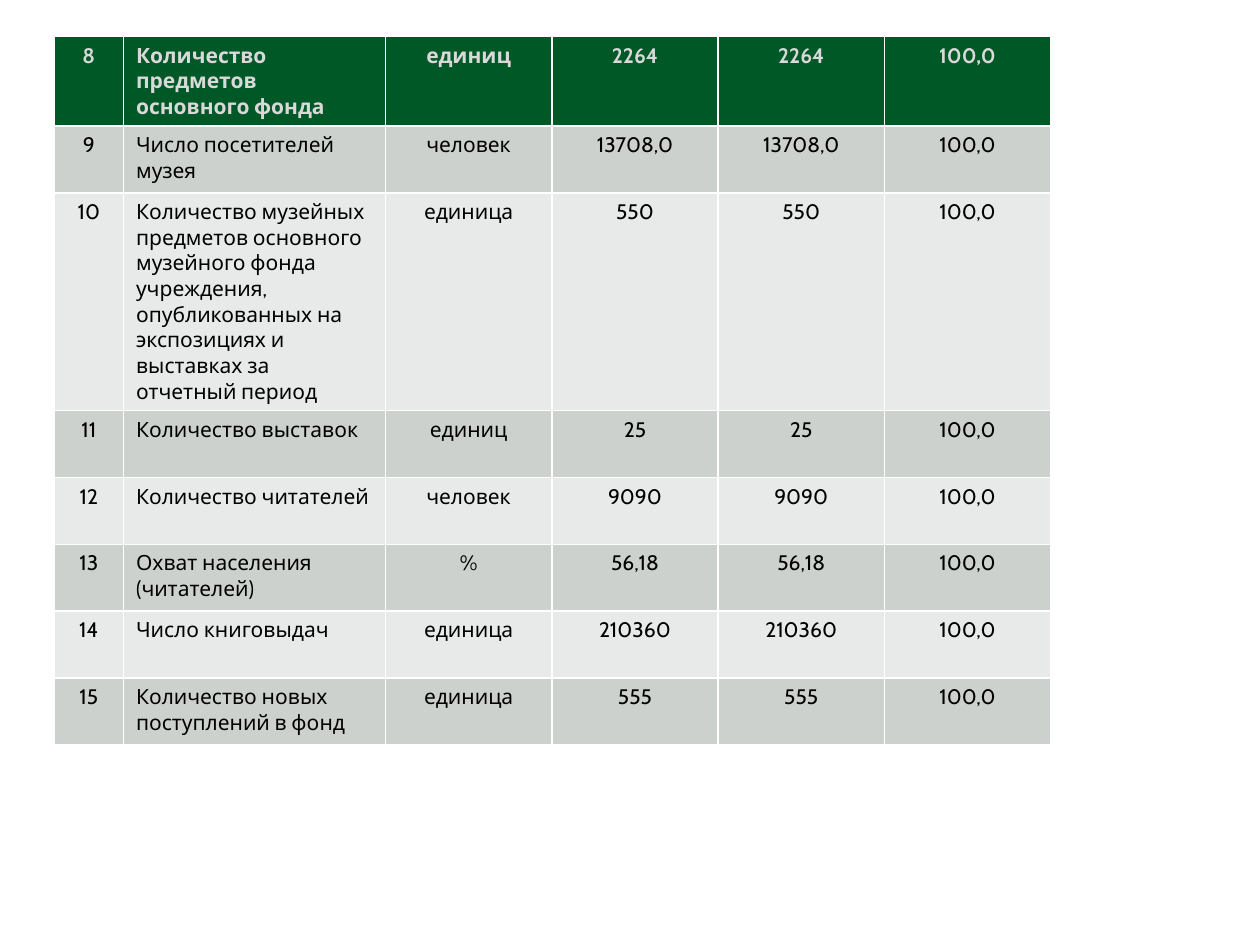
from pptx import Presentation
from pptx import util as u
from pptx.dml import color
from pptx.enum import text

WIDTHS = [0.55, 2.08] + [1.32] * 4
ROW_HEIGHT = 0.53

# Number, indicator, unit, value (the plan and the actual value agree)
INDICATORS = [
    ("8", "Количество предметов основного фонда", "единиц", "2264"),
    ("9", "Число посетителей музея", "человек", "13708,0"),
    ("10", "Количество музейных предметов основного музейного фонда учреждения, "
           "опубликованных на экспозициях и выставках за отчетный период",
     "единица", "550"),
    ("11", "Количество выставок", "единиц", "25"),
    ("12", "Количество читателей", "человек", "9090"),
    ("13", "Охват населения (читателей)", "%", "56,18"),
    ("14", "Число книговыдач", "единица", "210360"),
    ("15", "Количество новых поступлений в фонд", "единица", "555"),
]
COMPLETION = "100,0"


def rgb(value):
    return color.RGBColor.from_string(value)


class SlideBuilder:
    font_name = "Cabin"
    font_size = 12
    header_fill, header_ink = "005827", "D9D9D9"
    band_fills, ink = ("E7EAE8", "CCD1CD"), "000000"

    def __init__(self, slide):
        self.slide = slide

    def cell(self, cell, words, fill, ink, bold, align):
        cell.fill.solid()
        cell.fill.fore_color.rgb = rgb(fill)
        cell.text = words
        para = cell.text_frame.paragraphs[0]
        para.alignment = align
        font = para.font
        font.name, font.size, font.bold = self.font_name, u.Pt(self.font_size), bold
        font.color.rgb = rgb(ink)

    def table(self, left, top, widths, row_height, rows):
        # The default table style supplies the white rules between cells
        table = self.slide.shapes.add_table(
            len(rows), len(widths), u.Inches(left), u.Inches(top),
            u.Inches(sum(widths)), u.Inches(row_height * len(rows))).table
        for column, width in zip(table.columns, widths):
            column.width = u.Inches(width)
        for r, row in enumerate(rows):
            table.rows[r].height = u.Inches(row_height)
            header = r == 0
            fill = self.header_fill if header else self.band_fills[r % 2]
            ink = self.header_ink if header else self.ink
            for c, words in enumerate(row):
                align = text.PP_ALIGN.LEFT if c == 1 else text.PP_ALIGN.CENTER
                self.cell(table.cell(r, c), words, fill, ink, header, align)


def main():
    deck = Presentation()
    deck.slide_width, deck.slide_height = u.Inches(10), u.Inches(7.5)
    builder = SlideBuilder(deck.slides.add_slide(deck.slide_layouts[6]))

    # Table of indicators
    rows = [(number, name, unit, value, value, COMPLETION)
            for number, name, unit, value in INDICATORS]
    builder.table(0.43, 0.29, WIDTHS, ROW_HEIGHT, rows)

    deck.save("out.pptx")


if __name__ == "__main__":
    main()
